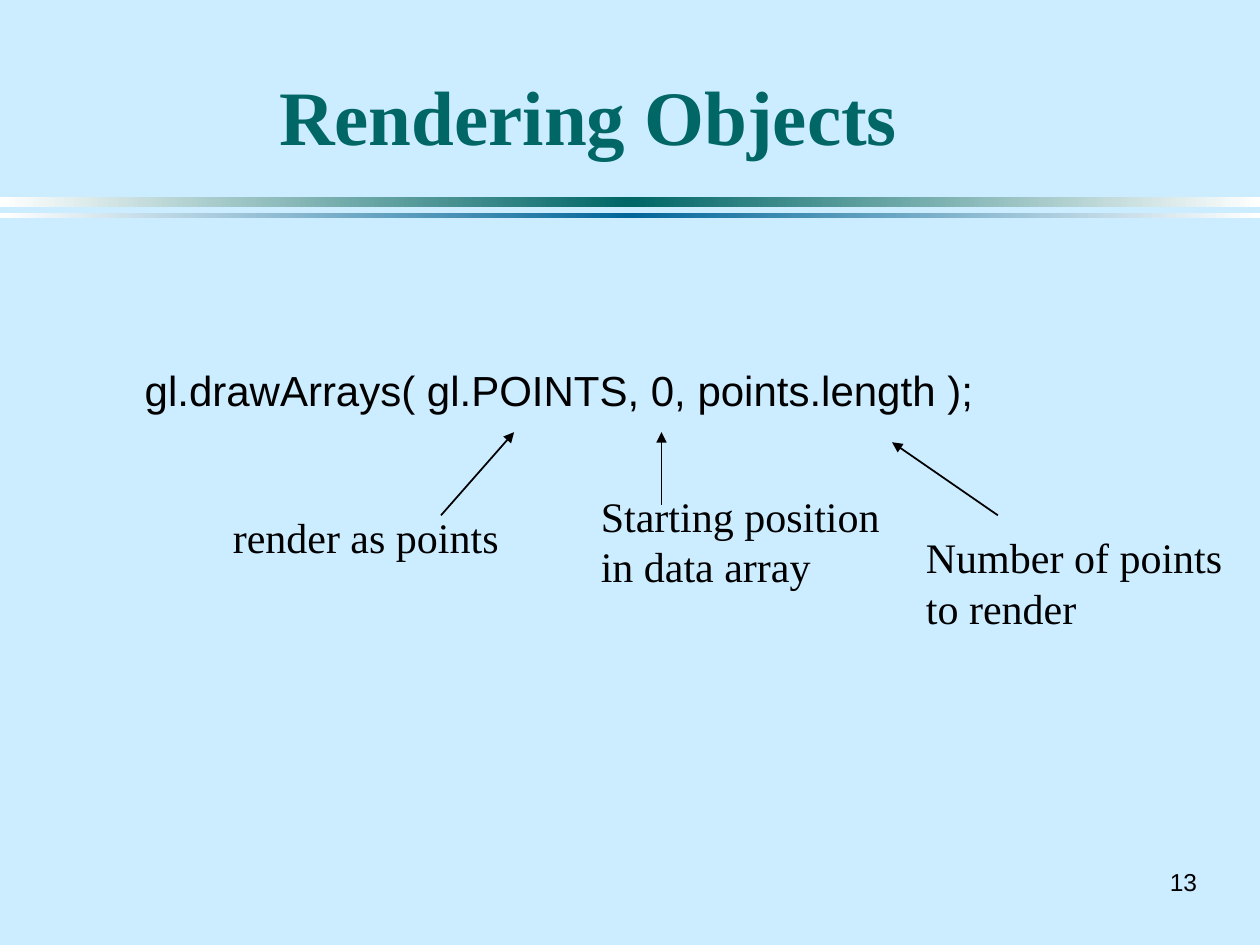
from copy import deepcopy

from lxml.etree import SubElement
from pptx import Presentation
from pptx.dml.color import RGBColor
from pptx.enum.shapes import MSO_CONNECTOR as Link, MSO_SHAPE as Shape
from pptx.enum.text import MSO_ANCHOR as Anchor, PP_ALIGN as Align
from pptx.oxml.ns import qn
from pptx.util import Inches, Pt


def color(code):
    return RGBColor.from_string(code)


def assign(target, values):
    for name, value in values.items():
        setattr(target, name, value)


class Deck:
    ink = "000000"
    serif = "Times New Roman"
    sans = "Arial"
    teal = "006666"
    blue = "006699"

    def __init__(self, slide):
        self.slide = slide

    def band(self, top, height, tint):
        """Full-width bar fading from white to the tint and back."""
        bar = self.slide.shapes.add_shape(
            Shape.RECTANGLE, 0, Inches(top), Inches(10), Inches(height))
        bar.shadow.inherit = False
        bar.line.fill.background()
        fill = bar.fill
        fill.gradient()
        fill.gradient_angle = 0
        stops = bar._element.spPr.find(qn("a:gradFill")).find(qn("a:gsLst"))
        stops.append(deepcopy(stops[-1]))
        marks = ((0, "FFFFFF"), (0.5, tint), (1, "FFFFFF"))
        for stop, (place, code) in zip(fill.gradient_stops, marks):
            stop.position = place
            stop.color.rgb = color(code)

    def text(self, words, box, font=serif, size=24, tint=ink, bold=False,
             wrap=True, anchor=Anchor.TOP, align=Align.LEFT, before=0):
        frame = self.slide.shapes.add_textbox(*map(Inches, box)).text_frame
        assign(frame, {"word_wrap": wrap, "vertical_anchor": anchor})
        para = frame.paragraphs[0]
        assign(para, {"alignment": align, "space_before": Pt(before)})
        run = para.add_run()
        run.text = words
        assign(run.font, {"name": font, "size": Pt(size), "bold": bold})
        run.font.color.rgb = color(tint)

    def arrow(self, start, end):
        line = self.slide.shapes.add_connector(
            Link.STRAIGHT, *map(Inches, start + end))
        line.line.width = Pt(1)
        line.line.color.rgb = color(self.ink)
        SubElement(line.line._get_or_add_ln(), qn("a:tailEnd"), type="triangle")
        SubElement(line._element.spPr, qn("a:effectLst"))


def main():
    prs = Presentation()
    assign(prs, {"slide_width": Inches(10), "slide_height": Inches(7.5)})
    slide = prs.slides.add_slide(prs.slide_layouts[6])
    back = slide.background.fill
    back.solid()
    back.fore_color.rgb = color("CCECFF")

    deck = Deck(slide)
    deck.band(1.56, 0.08, deck.teal)
    deck.band(1.69, 0.04, deck.blue)
    deck.text("13", (9.17, 6.83, 0.43, 0.33), font=deck.sans, size=14,
              wrap=False, anchor=Anchor.MIDDLE, align=Align.RIGHT)
    deck.text("Rendering Objects", (1, 0.5, 7.34, 0.83), size=44,
              tint=deck.teal, bold=True, anchor=Anchor.BOTTOM,
              align=Align.CENTER)
    deck.text("gl.drawArrays( gl.POINTS, 0, points.length );",
              (1.05, 2.84, 7.12, 1.08), font=deck.sans, before=3)

    deck.text("render as points", (1.75, 4.01, 2.33, 0.5), wrap=False)
    deck.text("Starting position in data array", (4.67, 3.84, 2.75, 0.91))
    deck.text("Number of points to render", (7.25, 4.17, 2.75, 0.91))
    for start, end in (((3.5, 4.09), (4.08, 3.43)),
                       ((5.25, 4.01), (5.25, 3.43)),
                       ((7.92, 4.09), (7.08, 3.51))):
        deck.arrow(start, end)

    prs.save("out.pptx")


if __name__ == "__main__":
    main()
